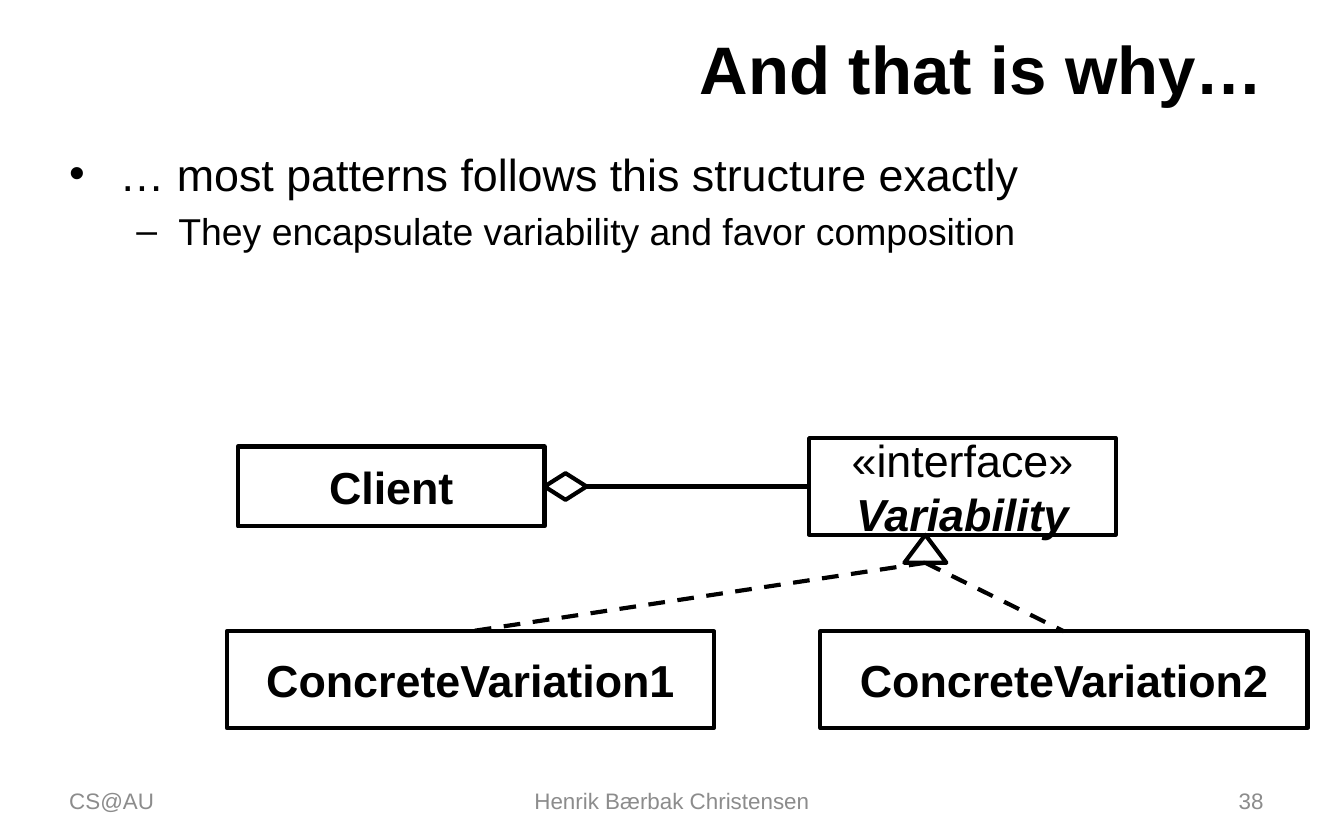
from dataclasses import dataclass
from lxml import etree
from pptx import Presentation
from pptx.dml.color import RGBColor as RGB
from pptx.enum.dml import MSO_LINE as Dash
from pptx.enum.shapes import MSO_CONNECTOR as Conn, MSO_SHAPE as Kind
from pptx.enum.text import MSO_ANCHOR as Anchor, PP_ALIGN as Align
from pptx.oxml.ns import qn
from pptx.util import Pt

PX = 9525  # EMU per px, 96 px to the inch


@dataclass(frozen=True)
class Theme:
    face: str = "Arial"
    ink: RGB = RGB(0, 0, 0)
    gray: RGB = RGB(0x8C, 0x8C, 0x8C)
    title: int = 36
    body: int = 24
    sub: int = 20
    foot: int = 12
    line: float = 2.25


T = Theme()


def emu(*vals):
    return [v * PX for v in vals]


def style(par, size, color=T.ink, bold=False, italic=False, align=Align.LEFT):
    par.alignment = align
    for run in par.runs:
        font = run.font
        font.name, font.size = T.face, Pt(size)
        font.bold, font.italic = bold, italic
        font.color.rgb = color


def label(slide, box, text, size, anchor=Anchor.MIDDLE, **look):
    frame = slide.shapes.add_textbox(*emu(*box)).text_frame
    frame.word_wrap = True
    frame.vertical_anchor = anchor
    frame.text = text
    for par in frame.paragraphs:
        style(par, size, **look)
    return frame


def bullet(par, mark, left, hang):
    props = par._p.get_or_add_pPr()
    props.set("marL", str(left * PX))
    props.set("indent", str(-hang * PX))
    etree.SubElement(props, qn("a:buFont"), typeface=T.face)
    etree.SubElement(props, qn("a:buChar"), char=mark)


def outline(slide, kind, box):
    shape = slide.shapes.add_shape(kind, *emu(*box))
    shape.shadow.inherit = False
    shape.fill.background()
    shape.line.color.rgb = T.ink
    shape.line.width = Pt(T.line)
    return shape


def node(slide, box, name, stereo=None):
    """Draw a class box; a stereotype makes its name italic."""
    shape = outline(slide, Kind.RECTANGLE, box)
    frame = shape.text_frame
    frame.word_wrap = False
    frame.vertical_anchor = Anchor.MIDDLE
    frame.text = f"{stereo}\n{name}" if stereo else name
    for par in frame.paragraphs:
        named = par.text == name
        style(par, T.body, bold=named, italic=named and bool(stereo),
              align=Align.CENTER)
    return shape


def link(slide, start, goal, side, dash=None):
    x, y = start
    line = slide.shapes.add_connector(Conn.STRAIGHT, x, y, x, y)
    line.end_connect(goal, side)
    line.line.color.rgb = T.ink
    line.line.width = Pt(T.line)
    if dash:
        line.line.dash_style = dash
    etree.SubElement(line._element.spPr, qn("a:effectLst"))
    return line


def points(slide, box):
    rows = [("… most patterns follows this structure exactly", T.body, "•", 36, 36),
            ("They encapsulate variability and favor composition", T.sub, "–", 78, 30)]
    frame = label(slide, box, "\n".join(row[0] for row in rows), T.body, Anchor.TOP)
    for level, (par, row) in enumerate(zip(frame.paragraphs, rows)):
        _, size, mark, left, hang = row
        par.level = level
        bullet(par, mark, left, hang)
        style(par, size)
        par.space_before = Pt(size * 0.2 if level else 0)


def diagram(slide, box):
    x, y, _, _ = box
    # Client holds the interface
    client = node(slide, (x + 8, y + 6, 219, 57), "Client")
    face = node(slide, (x + 416, y, 219, 69), "Variability", "«interface»")
    gem = outline(slide, Kind.DIAMOND, (x + 227, y + 25, 30, 19))
    hold = link(slide, (gem.left + gem.width, gem.top + gem.height // 2), face, 1)
    hold.begin_connect(gem, 3)
    # Concrete classes realize the interface
    tip = outline(slide, Kind.ISOSCELES_TRIANGLE, (x + 484, y + 69, 30, 20))
    foot = tip.left + tip.width // 2, tip.top + tip.height
    for i in range(2):
        kid = node(slide, (x + 424 * i, y + 138, 348, 69), f"ConcreteVariation{i + 1}")
        link(slide, foot, kid, 0, Dash.DASH)


def footer(slide, box):
    x, y, w, h = box
    cells = [(0, 224, "CS@AU", Align.LEFT),
             (288, 304, "Henrik Bærbak Christensen", Align.CENTER),
             (w - 224, 224, "38", Align.RIGHT)]
    for left, wide, text, align in cells:
        label(slide, (x + left, y, wide, h), text, T.foot, color=T.gray, align=align)


def main():
    deck = Presentation()
    deck.slide_width, deck.slide_height = emu(960, 600)
    slide = deck.slides.add_slide(deck.slide_layouts[6])
    label(slide, (48, 17, 864, 62), "And that is why…", T.title,
          bold=True, align=Align.RIGHT)
    points(slide, (40, 100, 872, 453))
    footer(slide, (40, 556, 872, 32))
    diagram(slide, (162, 313, 772, 207))
    deck.save("out.pptx")


if __name__ == "__main__":
    main()
